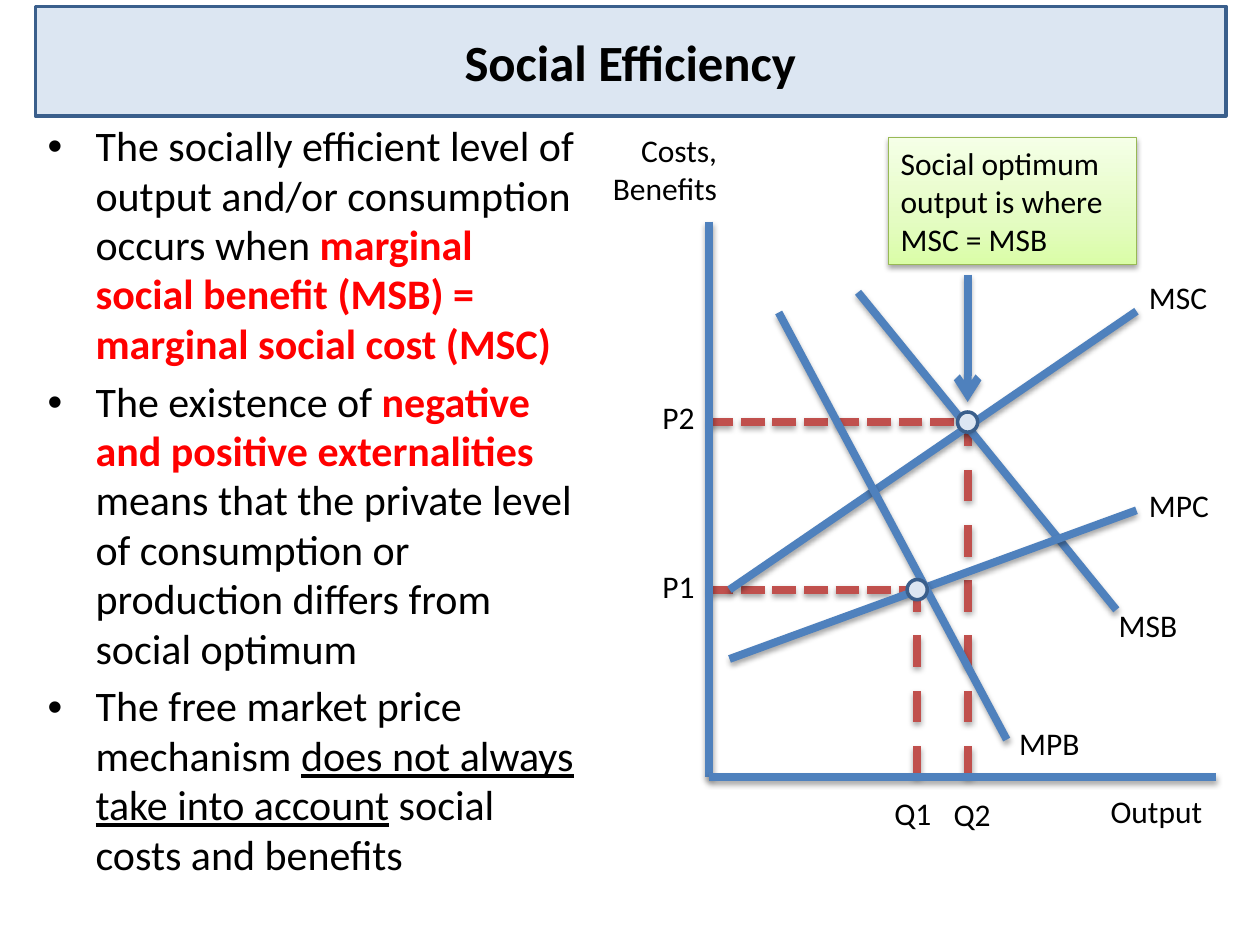
from typing import NamedTuple

from lxml import etree
from pptx import Presentation
from pptx.dml.color import RGBColor
from pptx.enum.dml import MSO_LINE_DASH_STYLE as DASH
from pptx.enum.shapes import MSO_CONNECTOR, MSO_SHAPE
from pptx.enum.text import MSO_ANCHOR, MSO_AUTO_SIZE, PP_ALIGN as AL
from pptx.oxml import parse_xml
from pptx.oxml.ns import nsdecls, qn
from pptx.util import Inches, Pt

BLACK = RGBColor(0x00, 0x00, 0x00)
RED = RGBColor(0xFF, 0x00, 0x00)
BLUE = RGBColor(0x4F, 0x81, 0xBD)
DARK_BLUE = RGBColor(0x3A, 0x5F, 0x8C)
PALE_BLUE = RGBColor(0xDC, 0xE6, 0xF2)
BRICK = RGBColor(0xC0, 0x50, 0x4D)
GREEN = RGBColor(0x98, 0xB9, 0x55)
GREEN_STOPS = ((0, "DAFDA7"), (35, "E4FCC2"), (100, "F5FFE7"))
FONT = "Calibri"


class Run(NamedTuple):
    text: str
    color: RGBColor = BLACK
    bold: bool = False
    underline: bool = False


class Segment(NamedTuple):
    start: tuple[float, float]
    end: tuple[float, float]
    color: RGBColor = BLUE
    dash: DASH | None = None
    arrow: bool = False


class Label(NamedTuple):
    text: str
    left: float
    top: float
    width: float
    align: AL = AL.LEFT
    height: float = 0.4


# Diagram geometry: axes and the two equilibrium points
AXIS_X, AXIS_TOP, AXIS_Y, AXIS_RIGHT = 5.63, 1.76, 6.17, 9.65
CURVE_LEFT, CURVE_RIGHT = 5.79, 9.02
OPTIMUM = Q2, P2 = 7.68, 3.35
MARKET = Q1, P1 = 7.28, 4.68

SEGMENTS = [
    # Guides to the axes
    Segment((Q2, AXIS_Y), OPTIMUM, BRICK, DASH.DASH),
    Segment((Q1, AXIS_Y), (Q1, 4.76), BRICK, DASH.DASH),
    Segment((AXIS_X, P2), OPTIMUM, BRICK, DASH.SQUARE_DOT),
    Segment((AXIS_X, P1), (7.36, P1), BRICK, DASH.SQUARE_DOT),
    # MSB, MSC, MPC and MPB curves
    Segment((6.81, 2.32), (8.86, 4.84)),
    Segment((CURVE_LEFT, 4.68), (CURVE_RIGHT, 2.47)),
    Segment((CURVE_LEFT, 5.23), (CURVE_RIGHT, 4.05)),
    Segment((6.18, 2.48), (7.99, 5.87)),
    # Axes, then the arrow to the optimum
    Segment((AXIS_X, AXIS_TOP), (AXIS_X, AXIS_Y)),
    Segment((AXIS_X, AXIS_Y), (AXIS_RIGHT, AXIS_Y)),
    Segment((Q2, 2.18), (Q2, 3.19), arrow=True),
]

LABELS = [
    Label("Costs, Benefits", 4.61, 0.99, 1.18, AL.RIGHT, 0.71),
    Label("Output", 8.46, 6.24, 1.18, AL.RIGHT),
    Label("P1", 5.16, 4.45, 0.47),
    Label("P2", 5.16, 3.11, 0.47),
    Label("Q1", 6.97, 6.25, 0.55, AL.CENTER),
    Label("Q2", 7.44, 6.26, 0.55, AL.CENTER),
    Label("MSC", 9.02, 2.16, 0.71),
    Label("MPC", 9.02, 3.81, 0.71),
    Label("MSB", 8.78, 4.76, 0.71),
    Label("MPB", 7.99, 5.7, 0.71),
]

BULLETS = [
    [Run("The socially efficient level of output and/or consumption occurs when "),
     Run("marginal social benefit (MSB) = marginal social cost (MSC)", RED, True)],
    [Run("The existence of "),
     Run("negative and positive externalities ", RED, True),
     Run("means that the private level of consumption or production differs from social optimum")],
    [Run("The free market price mechanism "),
     Run("does not always take into account", underline=True),
     Run(" social costs and benefits")],
]


def box(left: float, top: float, width: float, height: float) -> tuple:
    return tuple(Inches(v) for v in (left, top, width, height))


def add_shadow(sp) -> None:
    sp._element.spPr.append(parse_xml(
        f'<a:effectLst {nsdecls("a")}><a:outerShdw blurRad="40000" dist="23000" '
        'dir="5400000" rotWithShape="0"><a:srgbClr val="000000">'
        '<a:alpha val="35000"/></a:srgbClr></a:outerShdw></a:effectLst>'))


def style(sp, fill: RGBColor, line: RGBColor, width: float) -> None:
    sp.fill.solid()
    sp.fill.fore_color.rgb = fill
    sp.line.color.rgb = line
    sp.line.width = Pt(width)


def write(tf, text: str, size: float, align: AL, bold: bool = False) -> None:
    tf.word_wrap = True
    tf.text = text
    p = tf.paragraphs[0]
    p.alignment = align
    font = p.runs[0].font
    font.name, font.size, font.bold = FONT, Pt(size), bold
    font.color.rgb = BLACK


def add_title(s, text: str) -> None:
    sp = s.shapes.title
    sp.left, sp.top, sp.width, sp.height = box(0.28, 0.05, 9.45, 0.87)
    sp._element.spPr.append(parse_xml(
        f'<a:prstGeom {nsdecls("a")} prst="roundRect"><a:avLst/></a:prstGeom>'))
    style(sp, PALE_BLUE, DARK_BLUE, 2)
    tf = sp.text_frame
    write(tf, text, 29, AL.CENTER, bold=True)
    tf.auto_size = MSO_AUTO_SIZE.NONE
    tf.vertical_anchor = MSO_ANCHOR.MIDDLE


def add_bullets(s, bullets: list[list[Run]]) -> None:
    tf = s.shapes.add_textbox(*box(0.28, 0.92, 4.41, 6.22)).text_frame
    tf.word_wrap = True
    for i, runs in enumerate(bullets):
        p = tf.add_paragraph() if i else tf.paragraphs[0]
        pPr = p._p.get_or_add_pPr()
        pPr.set("marL", str(Inches(0.38)))
        pPr.set("indent", str(-Inches(0.38)))
        etree.SubElement(pPr, qn("a:buFont")).set("typeface", "Arial")
        etree.SubElement(pPr, qn("a:buChar")).set("char", "•")
        p.line_spacing = 0.98
        p.space_before = Pt(4.8 if i else 0)
        for run in runs:
            r = p.add_run()
            r.text = run.text
            r.font.name, r.font.size = FONT, Pt(24)
            r.font.bold, r.font.underline = run.bold, run.underline
            r.font.color.rgb = run.color


def add_segment(s, seg: Segment) -> None:
    ends = (Inches(v) for v in (*seg.start, *seg.end))
    cx = s.shapes.add_connector(MSO_CONNECTOR.STRAIGHT, *ends)
    cx.line.color.rgb = seg.color
    cx.line.width = Pt(4.5)
    if seg.dash is not None:
        cx.line.dash_style = seg.dash
    if seg.arrow:
        ln = cx.line._get_or_add_ln()
        etree.SubElement(ln, qn("a:tailEnd")).set("type", "arrow")
    add_shadow(cx)


def add_point(s, center: tuple[float, float], size: float = 0.16) -> None:
    x, y = center
    sp = s.shapes.add_shape(
        MSO_SHAPE.OVAL, *box(x - size / 2, y - size / 2, size, size))
    style(sp, PALE_BLUE, DARK_BLUE, 2)
    sp.shadow.inherit = False


def add_label(s, label: Label) -> None:
    sp = s.shapes.add_textbox(
        *box(label.left, label.top, label.width, label.height))
    write(sp.text_frame, label.text, 18, label.align)


def add_callout(s, text: str) -> None:
    sp = s.shapes.add_shape(MSO_SHAPE.RECTANGLE, *box(7.05, 1.09, 1.97, 1.01))
    stops = "".join(f'<a:gs pos="{pos * 1000}"><a:srgbClr val="{color}"/></a:gs>'
                    for pos, color in GREEN_STOPS)
    sp._element.spPr.append(parse_xml(
        f'<a:gradFill {nsdecls("a")} rotWithShape="1"><a:gsLst>{stops}</a:gsLst>'
        '<a:lin ang="16200000" scaled="0"/></a:gradFill>'))
    sp.line.color.rgb = GREEN
    sp.line.width = Pt(0.75)
    add_shadow(sp)
    write(sp.text_frame, text, 18, AL.LEFT)


def main() -> None:
    prs = Presentation()
    prs.slide_width, prs.slide_height = Inches(10), Inches(7.5)
    s = prs.slides.add_slide(prs.slide_layouts[5])
    add_title(s, "Social Efficiency")
    add_bullets(s, BULLETS)
    # Diagram
    for seg in SEGMENTS:
        add_segment(s, seg)
    for center in (OPTIMUM, MARKET):
        add_point(s, center)
    for label in LABELS:
        add_label(s, label)
    add_callout(s, "Social optimum output is where MSC = MSB")
    prs.save("out.pptx")


if __name__ == "__main__":
    main()
